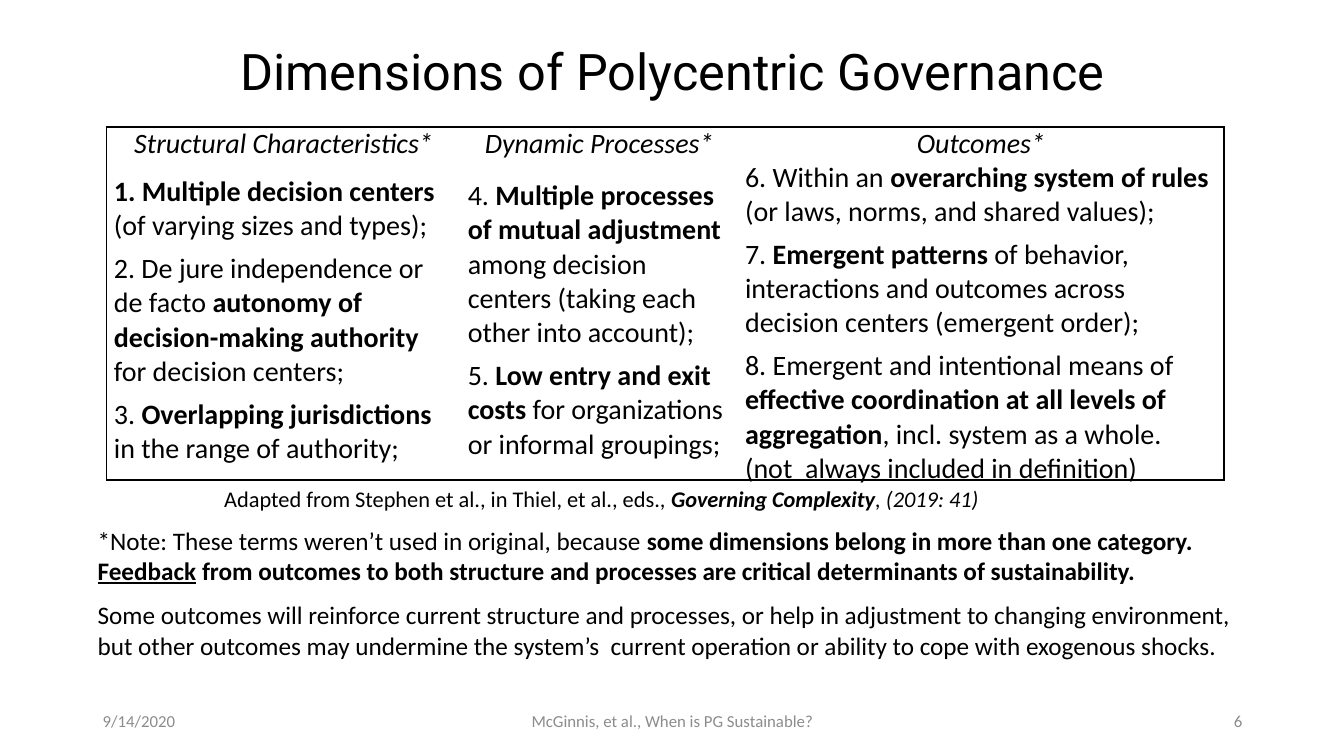
from dataclasses import dataclass

from lxml import etree
from pptx import Presentation
from pptx import util as u
from pptx.dml.color import RGBColor
from pptx.enum import text as t
from pptx.oxml import ns


@dataclass(frozen=True)
class Theme:
    ink: str = "000000"
    grey: str = "8C8C8C"
    head: str = "Roboto"
    body: str = "Calibri"
    title: int = 36
    cell: int = 20
    note: int = 18
    cite: int = 16
    foot: int = 12
    rule: float = 1


THEME = Theme()
LEFT, MID, RIGHT = t.PP_ALIGN.LEFT, t.PP_ALIGN.CENTER, t.PP_ALIGN.RIGHT

HEADS = ["Structural Characteristics*", "Dynamic Processes*", "Outcomes*"]
POINTS = [
    [
        [("1. Multiple decision centers ", "b"), "(of varying sizes and types);"],
        ["2. De jure independence or de facto ",
         ("autonomy of decision-making authority ", "b"), "for decision centers;"],
        ["3. ", ("Overlapping jurisdictions ", "b"), "in the range of authority;"],
    ],
    [
        ["4. ", ("Multiple processes of mutual adjustment ", "b"),
         "among decision centers (taking each other into account);"],
        ["5. ", ("Low entry and exit costs ", "b"),
         "for organizations or informal groupings;"],
    ],
    [
        ["6. Within an ", ("overarching system of rules ", "b"),
         "(or laws, norms, and shared values);"],
        ["7. ", ("Emergent patterns ", "b"),
         "of behavior, interactions and outcomes across decision centers "
         "(emergent order);"],
        ["8. Emergent and intentional means of ",
         ("effective coordination at all levels of aggregation", "b"),
         ", incl. system as a whole.", "\n",
         "(not  always included in definition)"],
    ],
]
CITE = [["Adapted from Stephen et al., in Thiel, et al., eds., ",
         ("Governing Complexity", "bi"), (", (2019: 41)", "i")]]
NOTE = [
    ["*Note: These terms weren’t used in original, because ",
     ("some dimensions belong in more than one category.", "b")],
    [("Feedback", "bu"),
     (" from outcomes to both structure and processes are critical "
      "determinants of sustainability.", "b")],
]
AFTER = [["Some outcomes will reinforce current structure and processes, or help "
          "in adjustment to changing environment, but other outcomes may undermine "
          "the system’s  current operation or ability to cope with exogenous shocks."]]


def write(frame, paras, size, font=THEME.body, color=THEME.ink, align=LEFT,
          gaps=None, lead=None):
    frame.word_wrap = True
    for n, parts in enumerate(paras):
        para = frame.add_paragraph() if n else frame.paragraphs[0]
        para.alignment = align
        if lead:
            para.line_spacing = lead
        if n and gaps:
            para.space_before = u.Pt(gaps[n])
        for part in parts:
            if part == "\n":
                para.add_line_break()
                continue
            words, style = (part, "") if isinstance(part, str) else part
            run = para.add_run()
            run.text = words
            face = run.font
            face.name, face.size = font, u.Pt(size)
            face.color.rgb = RGBColor.from_string(color)
            face.bold, face.italic = "b" in style, "i" in style
            face.underline = "u" in style


def label(slide, box, paras, size, anchor=t.MSO_ANCHOR.TOP, **form):
    frame = slide.shapes.add_textbox(*map(u.Inches, box)).text_frame
    frame.vertical_anchor = anchor
    write(frame, paras, size, **form)


def border(cell, sides):
    props = cell._tc.get_or_add_tcPr()
    for side in "LRTB":
        line = etree.SubElement(props, ns.qn(f"a:ln{side}"),
                                w=str(u.Pt(THEME.rule)))
        if side in sides:
            fill = etree.SubElement(line, ns.qn("a:solidFill"))
            etree.SubElement(fill, ns.qn("a:srgbClr"), val=THEME.ink)
        else:
            etree.SubElement(line, ns.qn("a:noFill"))


def grid(slide, box, cols, rows):
    table = slide.shapes.add_table(
        len(rows), len(cols), *map(u.Inches, box)).table
    table.first_row = table.horz_banding = False
    for col, wide in zip(table.columns, cols):
        col.width = u.Inches(wide)
    for row, high in zip(table.rows, rows):
        row.height = u.Inches(high)
    for c in range(len(cols)):
        edge = {0: "L", len(cols) - 1: "R"}.get(c, "")
        for r in range(len(rows)):
            cell = table.cell(r, c)
            border(cell, edge + "TB"[r])
            cell.fill.background()
            cell.margin_left = cell.margin_right = u.Inches(0.07)
            cell.margin_top = cell.margin_bottom = 0
            cell.vertical_anchor = t.MSO_ANCHOR.MIDDLE
            if r:
                write(cell.text_frame, POINTS[c], THEME.cell,
                      gaps=[6] * len(POINTS[c]))
            else:
                write(cell.text_frame, [[(HEADS[c], "i")]], THEME.cell, align=MID)


def footer(slide, box):
    left, top, width, height = box
    side, wide = 3, 4.5
    spots = [
        ("9/14/2020", left, side, LEFT),
        ("McGinnis, et al., When is PG Sustainable?",
         left + (width - wide) / 2, wide, MID),
        ("6", left + width - side, side, RIGHT),
    ]
    for words, x, w, align in spots:
        label(slide, (x, top, w, height), [[words]], THEME.foot,
              anchor=t.MSO_ANCHOR.MIDDLE, color=THEME.grey, align=align)


def main():
    deck = Presentation()
    deck.slide_width, deck.slide_height = u.Inches(13.33), u.Inches(7.5)
    slide = deck.slides.add_slide(deck.slide_layouts[6])
    label(slide, (0.92, 0.4, 11.5, 0.68), [["Dimensions of Polycentric Governance"]],
          THEME.title, anchor=t.MSO_ANCHOR.MIDDLE, font=THEME.head,
          align=MID, lead=0.9)
    grid(slide, (1.06, 1.26, 11.08, 3.45), [3.51, 2.75, 4.82], [0.32, 3.13])
    label(slide, (0.33, 4.76, 11.27, 0.4), CITE, THEME.cite, align=MID)
    label(slide, (0.87, 5.16, 11.46, 1.48), NOTE + AFTER, THEME.note,
          gaps=[0, 0, 10])
    footer(slide, (0.92, 6.95, 11.5, 0.4))
    deck.save("out.pptx")


if __name__ == "__main__":
    main()
